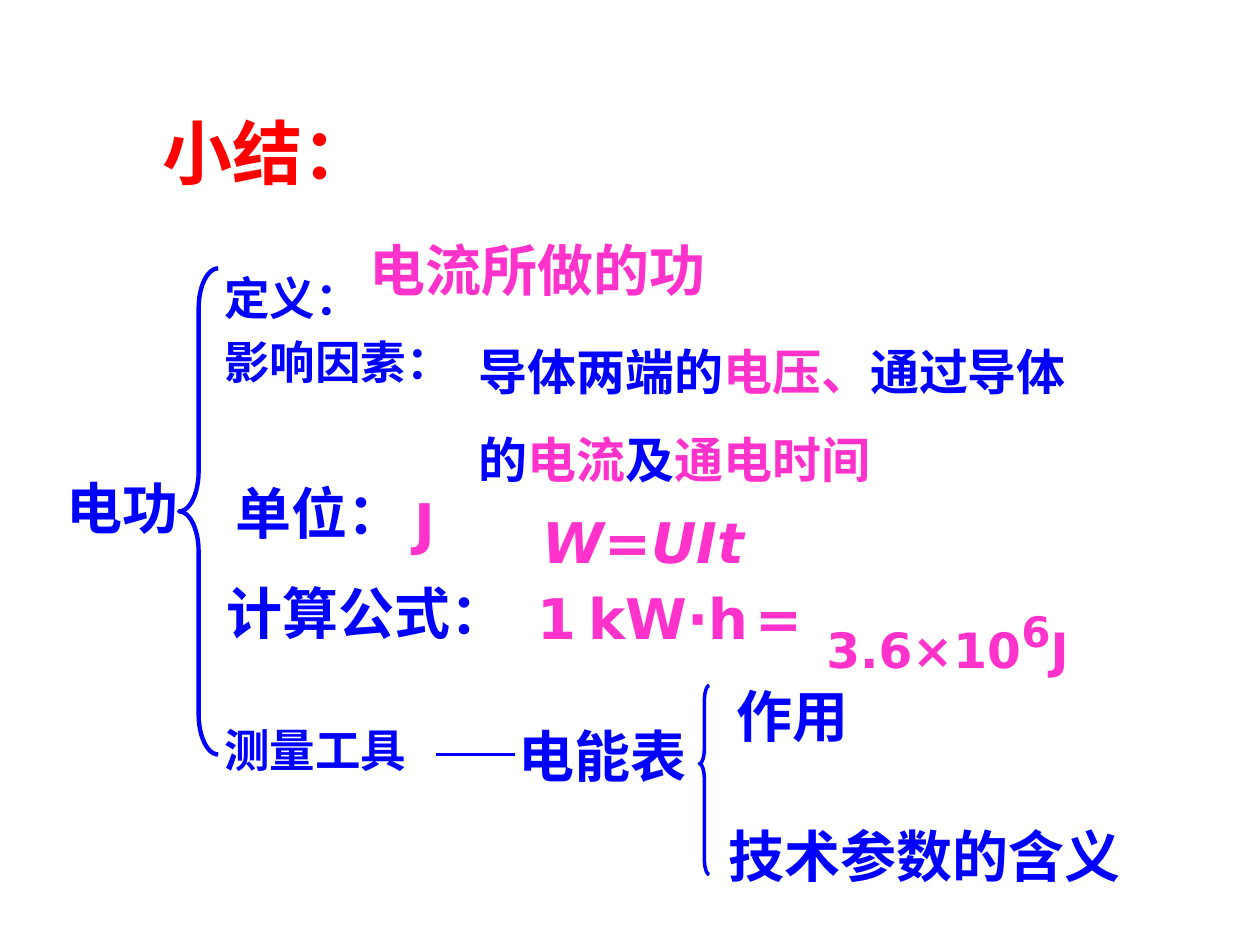
from pptx import Presentation
from pptx.dml.color import RGBColor
from pptx.enum.shapes import MSO_CONNECTOR as Link, MSO_SHAPE as Shape
from pptx.enum.text import MSO_ANCHOR as Anchor, MSO_AUTO_SIZE as AutoSize, PP_ALIGN as Align
from pptx.oxml.ns import qn
from pptx.util import Cm, Pt
from lxml.etree import SubElement

COLORS = {"blue": "0000FF", "pink": "FF33CC", "red": "FF0000"}
FONT = "DejaVu Sans"
TITLE = "小结："
TOPICS = [("定义：", 0), ("影响因素：", 5.8), ("测量工具", 190)]
LABELS = [
    ("电能表", 10.21, 14.43, 4.8, "blue"),
    ("技术参数的含义", 14.43, 16.43, 9, "blue"),
    ("电流所做的功", 7.19, 4.62, 9, "pink"),
    ("计算公式：", 4.32, 11.53, 5.8, "blue"),
    ("电功", 1.09, 9.42, 3.4, "blue"),
    ("作用", 14.6, 13.61, 9, "blue"),
    ("单位：", 4.5, 9.52, 4.2, "blue"),
    ("J", 8.1, 9.73, 2.2, "pink"),
    ("1", 10.59, 11.63, 1.2, "pink"),
    ("kW·h", 11.61, 11.63, 4.2, "pink"),
    ("=", 14.99, 11.63, 1.8, "pink"),
]
FORMULA = ("W=UIt", 10.69, 10.11, 9, "pink")
FACTORS = [("导体两端的", "blue"), ("电压、", "pink"), ("通过导体的", "blue"),
           ("电流", "pink"), ("及", "blue"), ("通电时间", "pink")]
ENERGY = [("3.6×10", 48, -25000), ("6", 24, 0), ("J", 48, -25000)]
BRACES = [(14.1, 13.82, 0.2, 3.81, 2, (1.562, 0.414)),
          (3.61, 5.41, 0.79, 9.8, 2.5, (1.023, 0.5))]
DASH = (8.79, 10.39, 15.21)


def rgb(name):
    return RGBColor.from_string(COLORS[name])


def style(font, size, color, face=FONT):
    font.name, font.size, font.bold = face, Pt(size), True
    font.color.rgb = rgb(color)


def place(shape, left, top, width, height):
    shape.left, shape.top = Cm(left), Cm(top)
    shape.width, shape.height = Cm(width), Cm(height)
    frame = shape.text_frame
    frame.auto_size = AutoSize.NONE
    frame.vertical_anchor = Anchor.TOP
    return frame


def add_box(page, left, top, width, height=1.6):
    box = page.shapes.add_textbox(0, 0, 0, 0)
    frame = place(box, left, top, width, height)
    frame.word_wrap = True
    return frame.paragraphs[0]


def add_label(page, text, left, top, width, color):
    para = add_box(page, left, top, width)
    para.text = text
    style(para.font, 32, color)
    return para


def add_topics(page):
    frame = place(page.placeholders[1], 4.27, 5.31, 6, 11)
    for number, (text, gap) in enumerate(TOPICS):
        para = frame.add_paragraph() if number else frame.paragraphs[0]
        para.text = text
        props = para._p.get_or_add_pPr()
        props.set("marL", "0")
        props.set("indent", "0")
        SubElement(props, qn("a:buNone"))
        para.space_before = Pt(gap)
        style(para.font, 26, "blue", "Times New Roman")


def add_brace(page, left, top, width, height, weight, bends):
    brace = page.shapes.add_shape(Shape.LEFT_BRACE, Cm(left), Cm(top), Cm(width), Cm(height))
    brace.shadow.inherit = False
    brace.fill.background()
    brace.line.color.rgb = rgb("blue")
    brace.line.width = Pt(weight)
    for number, bend in enumerate(bends):
        brace.adjustments[number] = bend


def main():
    deck = Presentation()
    deck.slide_width, deck.slide_height = Cm(25.4), Cm(19.05)
    page = deck.slides.add_slide(deck.slide_layouts[1])

    frame = place(page.shapes.title, 3.02, 2.08, 4.9, 1.96)
    frame.word_wrap = False
    para = frame.paragraphs[0]
    para.text = TITLE
    para.alignment = Align.LEFT
    style(para.font, 40, "red", "Arial")

    add_topics(page)
    for brace in BRACES:
        add_brace(page, *brace)

    start, end, level = DASH
    dash = page.shapes.add_connector(Link.STRAIGHT, Cm(start), Cm(level), Cm(end), Cm(level))
    dash.line.color.rgb = rgb("blue")
    dash.line.width = Pt(2)
    SubElement(dash._element.spPr, qn("a:effectLst"))

    for label in LABELS:
        add_label(page, *label)
    add_label(page, *FORMULA).font.italic = True

    para = add_box(page, 9.4, 6.17, 12.5, 3.86)
    para.line_spacing = 1.5
    for text, color in FACTORS:
        span = para.add_run()
        span.text = text
        style(span.font, 28, color)

    para = add_box(page, 16.41, 11.23, 7.2)
    for text, size, shift in ENERGY:
        span = para.add_run()
        span.text = text
        style(span.font, size, "pink")
        span._r.get_or_add_rPr().set("baseline", str(shift))

    deck.save("out.pptx")


if __name__ == "__main__":
    main()
